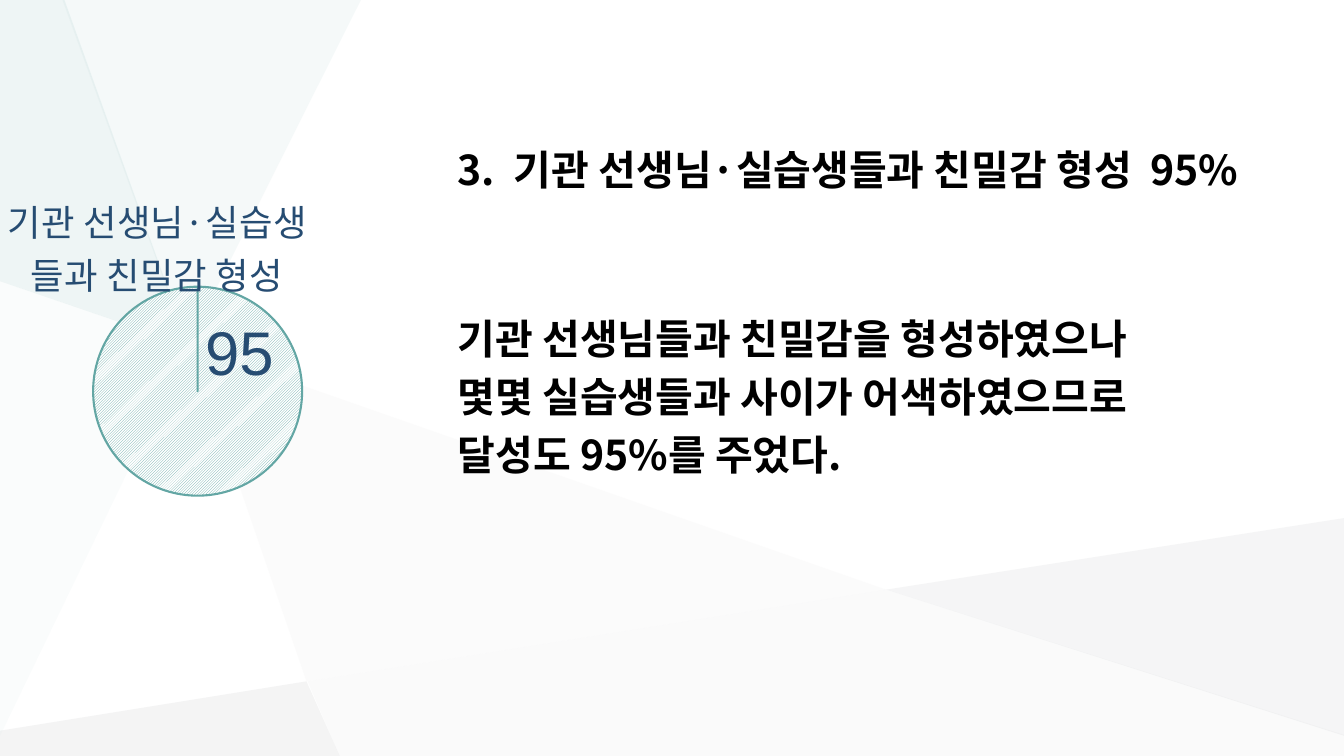
import pptx
import pptx.chart.data
import pptx.dml.color
import pptx.enum.chart
import pptx.enum.dml
import pptx.enum.text
import pptx.oxml
import pptx.oxml.ns
import pptx.util

PX = 9144  # 100 px to the inch
RGB = pptx.dml.color.RGBColor
BLACK = RGB(0x00, 0x00, 0x00)
WHITE = RGB(0xFF, 0xFF, 0xFF)
NAVY = RGB(0x26, 0x4C, 0x72)
TEAL = RGB(0x63, 0xA6, 0xA4)
CHARCOAL = RGB(0x32, 0x32, 0x32)
GRAY = RGB(0x9D, 0x9C, 0x9C)
SILVER = RGB(0xC1, 0xC0, 0xC0)
SMOKE = RGB(0xF3, 0xF2, 0xF2)
STEEL = RGB(0xB6, 0xB8, 0xBA)
CLOUD = RGB(0xC6, 0xC8, 0xCA)
MIST = RGB(0xE0, 0xED, 0xED)
MINT = RGB(0xC1, 0xDB, 0xDB)
KOREAN = "Noto Sans CJK KR"


def sub(parent, tag, **attributes):
    """Append a child element such as a:alpha and return it."""
    child = pptx.oxml.parse_xml(f"<{tag} {pptx.oxml.ns.nsdecls(tag.split(':')[0])}/>")
    for name, value in attributes.items():
        child.set(name, str(value))
    parent.append(child)
    return child


def write(p, text, font, size, color, bold=False, before=0):
    p.space_before = pptx.util.Pt(before)
    p.line_spacing = 1.0
    r = p.add_run()
    r.text = text
    r.font.size = pptx.util.Pt(size)
    r.font.bold = bold
    r.font.color.rgb = color
    r.font.name = font
    sub(r.font._element, "a:ea", typeface=font)


prs = pptx.Presentation()
prs.slide_width, prs.slide_height = 1333 * PX, 750 * PX
s = prs.slides.add_slide(prs.slide_layouts[1])
title, body = s.placeholders
title.element.getparent().remove(title.element)

# Background facets: colour, opacity in percent, corners
facets = [
    (SMOKE, 26, [(190, 344), (304, 676), (879, 585)]),
    (STEEL, 15, [(304, 676), (0, 725), (0, 750), (337, 750)]),
    (MIST, 31, [(358, 0), (62, 0), (186, 343)]),
    (CLOUD, 17, [(1333, 514), (879, 585), (1333, 730)]),
    (STEEL, 6, [(879, 585), (305, 676), (337, 750), (1333, 750), (1333, 729)]),
    (MINT, 27, [(64, 0), (0, 0), (0, 279), (187, 343)]),
    (MINT, 8, [(0, 279), (0, 730), (187, 343)]),
]
for color, opacity, corners in facets:
    builder = s.shapes.build_freeform(*corners[0], scale=PX)
    builder.add_line_segments(corners[1:], close=True)
    sp = builder.convert_to_shape()
    sp.shadow.inherit = False
    sp.line.fill.background()
    sp.fill.solid()
    sp.fill.fore_color.rgb = color
    for clr in sp.element.spPr.iter(pptx.oxml.ns.qn("a:srgbClr")):
        sub(clr, "a:alpha", val=opacity * 1000)

# Body text, in front of the facets
body.element.getparent().append(body.element)
body.left, body.top, body.width, body.height = 443 * PX, 25 * PX, 823 * PX, 650 * PX
tf = body.text_frame
tf.word_wrap = True
tf.auto_size = pptx.enum.text.MSO_AUTO_SIZE.NONE
tf.vertical_anchor = pptx.enum.text.MSO_ANCHOR.TOP
tf.margin_left, tf.margin_right, tf.margin_top = 11 * PX, 20 * PX, 118 * PX
lines = [
    ("3.  기관 선생님·실습생들과 친밀감 형성  95%", 0),
    ("기관 선생님들과 친밀감을 형성하였으나", 86),
    ("몇몇 실습생들과 사이가 어색하였으므로", 6),
    ("달성도 95%를 주었다.", 6),
]
for i, (text, before) in enumerate(lines):
    p = tf.paragraphs[0] if i == 0 else tf.add_paragraph()
    pPr = p._p.get_or_add_pPr()
    pPr.set("marL", "0")
    pPr.set("indent", "0")
    sub(pPr, "a:buNone")
    write(p, text, KOREAN, 29.3, BLACK, bold=True, before=before)

# Pie chart
name = "기관 선생님·실습생들과 친밀감 형성"
data = pptx.chart.data.CategoryChartData()
data.categories = ["1", "2", "3", "4"]
data.add_series(name, [95, None, None, None])
chart = s.shapes.add_chart(
    pptx.enum.chart.XL_CHART_TYPE.PIE, 1 * PX, 177 * PX, 415 * PX, 384 * PX, data).chart
chart.has_legend = False
chart.font.name, chart.font.size, chart.font.color.rgb = "Arial", pptx.util.Pt(12), NAVY
chart.has_title = True
write(chart.chart_title.text_frame.paragraphs[0], name, KOREAN, 26, NAVY)

plot = chart.plots[0]
plot.vary_by_categories = True
series = plot.series[0]
for i, color in enumerate([TEAL, CHARCOAL, GRAY, SILVER]):
    look = series.points[i].format
    look.fill.patterned()
    look.fill.pattern = pptx.enum.dml.MSO_PATTERN.LIGHT_UPWARD_DIAGONAL
    look.fill.fore_color.rgb, look.fill.back_color.rgb = color, WHITE
    look.line.color.rgb, look.line.width = color, pptx.util.Pt(1.5)

labels = series.data_labels
labels.show_value = True
labels.show_percentage = False
label = series.points[0].data_label
label.font.name, label.font.size, label.font.color.rgb = "Arial", pptx.util.Pt(44), NAVY
label.position = pptx.enum.chart.XL_LABEL_POSITION.CENTER

# Manual places, as fractions of the chart
dLbl = labels._element.find(pptx.oxml.ns.qn("c:dLbl"))
title_element = chart.chart_title._element
for old in title_element.findall(pptx.oxml.ns.qn("c:layout")):
    title_element.remove(old)
plot_area = chart._chartSpace.chart.plotArea
for old in plot_area.findall(pptx.oxml.ns.qn("c:layout")):
    plot_area.remove(old)
places = [
    (title_element, 1, dict(xMode="edge", yMode="edge", x=0, y=0.01)),
    (plot_area, 0, dict(layoutTarget="inner", xMode="edge", yMode="edge",
                        x=0.22, y=0.28, w=0.5, h=0.54)),
    (dLbl, 1, dict(x=0.1, y=-0.23)),
]
for parent, index, values in places:
    layout = sub(parent, "c:layout")
    parent.insert(index, layout)
    manual = sub(layout, "c:manualLayout")
    for key, value in values.items():
        sub(manual, f"c:{key}", val=value)

prs.save("out.pptx")
